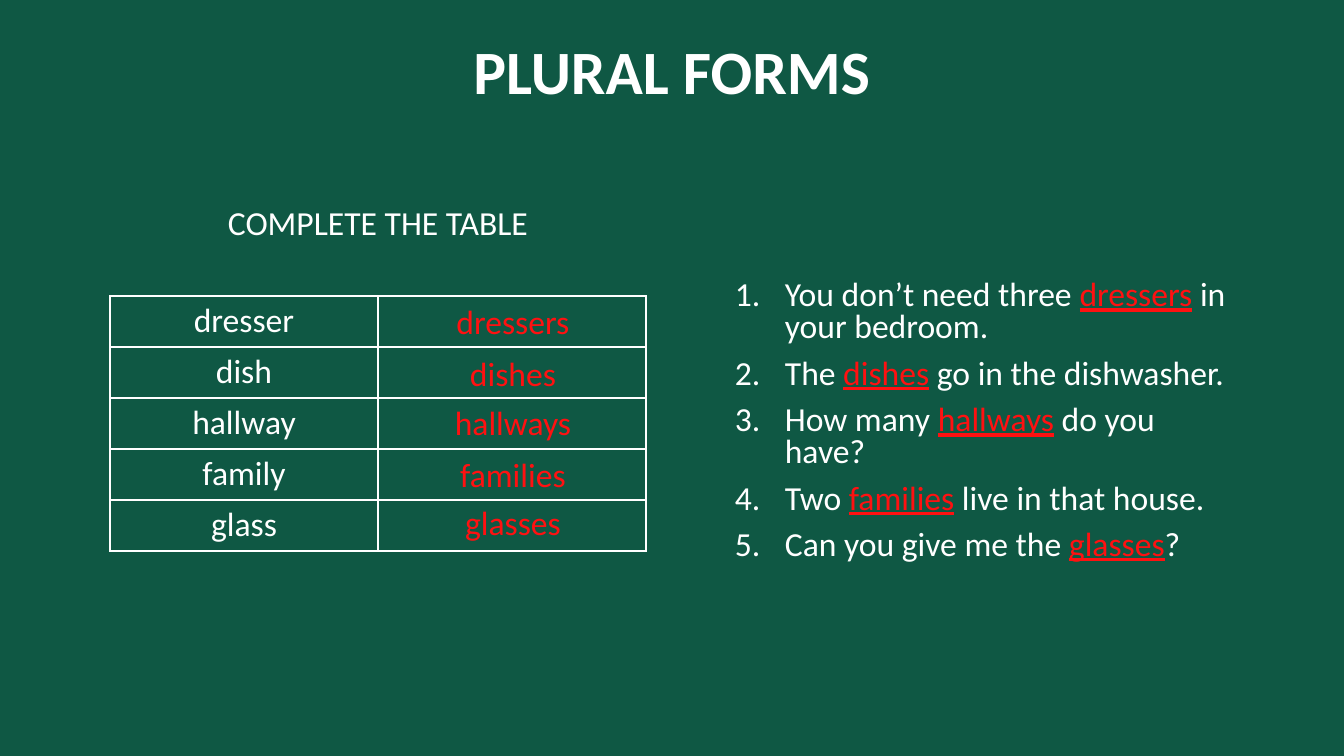
from dataclasses import dataclass

from lxml.etree import SubElement
from pptx import Presentation
from pptx.dml.color import RGBColor
from pptx.enum.text import MSO_ANCHOR as Anchor, PP_ALIGN as Align
from pptx.oxml.ns import qn
from pptx.util import Emu, Pt

SCALE = 12192000 / 1344


@dataclass(frozen=True)
class Theme:
    font: str = "Calibri"
    board: str = "0F5844"
    chalk: str = "FFFFFF"
    answer: str = "FF1111"
    title_size: int = 44
    body_size: int = 24
    border_width: int = 1


THEME = Theme()

NOUNS = [
    ("dresser", "dressers", 296),
    ("dish", "dishes", 348),
    ("hallway", "hallways", 397),
    ("family", "families", 449),
    ("glass", "glasses", 497),
]
SENTENCES = [
    ("You don’t need three ", "dressers", " in your bedroom."),
    ("The ", "dishes", " go in the dishwasher."),
    ("How many ", "hallways", " do you have?"),
    ("Two ", "families", " live in that house."),
    ("Can you give me the ", "glasses", "?"),
]


def px(length):
    return Emu(round(length * SCALE))


def add_run(paragraph, wording, color=THEME.chalk, size=THEME.body_size, bold=False, underline=False):
    run = paragraph.add_run()
    run.text = wording
    font = run.font
    font.name, font.size = THEME.font, Pt(size)
    font.bold, font.underline = bold, underline
    font.color.rgb = RGBColor.from_string(color)


def add_frame(slide, left, top, width, height, anchor=Anchor.TOP, wrap=True):
    frame = slide.shapes.add_textbox(px(left), px(top), px(width), px(height)).text_frame
    frame.word_wrap = wrap
    frame.vertical_anchor = anchor
    return frame


def add_heading(slide, wording, box, anchor=Anchor.TOP, **style):
    heading = add_frame(slide, *box, anchor=anchor).paragraphs[0]
    heading.alignment = Align.CENTER
    heading.line_spacing = 0.9
    add_run(heading, wording, **style)


def add_borders(cell):
    properties = cell._tc.get_or_add_tcPr()
    for side in ("lnL", "lnR", "lnT", "lnB"):
        border = SubElement(properties, qn(f"a:{side}"), w=str(Pt(THEME.border_width)))
        paint = SubElement(border, qn("a:solidFill"))
        SubElement(paint, qn("a:srgbClr"), val=THEME.chalk)


def add_noun_table(slide, left, top, width, row_height):
    table = slide.shapes.add_table(
        len(NOUNS), 2, px(left), px(top), px(width), px(row_height * len(NOUNS))
    ).table
    table.first_row = table.horz_banding = False
    for row, (singular, _, _) in zip(table.rows, NOUNS):
        row.height = px(row_height)
        for cell in row.cells:
            add_borders(cell)
            cell.fill.background()
        noun = row.cells[0].text_frame.paragraphs[0]
        noun.alignment = Align.CENTER
        add_run(noun, singular)


def add_answer(slide, plural, left, top, width, height):
    answer = add_frame(slide, left, top, width, height, wrap=False).paragraphs[0]
    answer.alignment = Align.CENTER
    add_run(answer, plural, THEME.answer)


def number(paragraph, indent):
    properties = paragraph._p.get_or_add_pPr()
    properties.set("marL", str(px(indent)))
    properties.set("indent", str(-px(indent)))
    color = SubElement(properties, qn("a:buClr"))
    SubElement(color, qn("a:srgbClr"), val=THEME.chalk)
    SubElement(properties, qn("a:buFont"), typeface=THEME.font)
    SubElement(properties, qn("a:buAutoNum"), type="arabicPeriod")


def add_sentences(slide, left, top, width, height):
    frame = add_frame(slide, left, top, width, height)
    for index, (before, plural, after) in enumerate(SENTENCES):
        sentence = frame.add_paragraph() if index else frame.paragraphs[0]
        sentence.line_spacing = 0.8
        sentence.space_before = Pt(10)
        number(sentence, 50)
        add_run(sentence, before)
        add_run(sentence, plural, THEME.answer, underline=True)
        add_run(sentence, after)


def main():
    deck = Presentation()
    deck.slide_width, deck.slide_height = px(1344), px(756)
    slide = deck.slides.add_slide(deck.slide_layouts[6])
    board = slide.background.fill
    board.solid()
    board.fore_color.rgb = RGBColor.from_string(THEME.board)

    add_heading(slide, "PLURAL FORMS", (92, 2, 1160, 146), Anchor.MIDDLE,
                size=THEME.title_size, bold=True)
    add_noun_table(slide, 110, 296, 536, 51)
    add_sentences(slide, 725, 276, 527, 292)
    add_heading(slide, "COMPLETE THE TABLE", (92, 202, 572, 42))
    for _, plural, top in NOUNS:
        add_answer(slide, plural, 443, top, 140, 51)

    deck.save("out.pptx")


if __name__ == "__main__":
    main()
